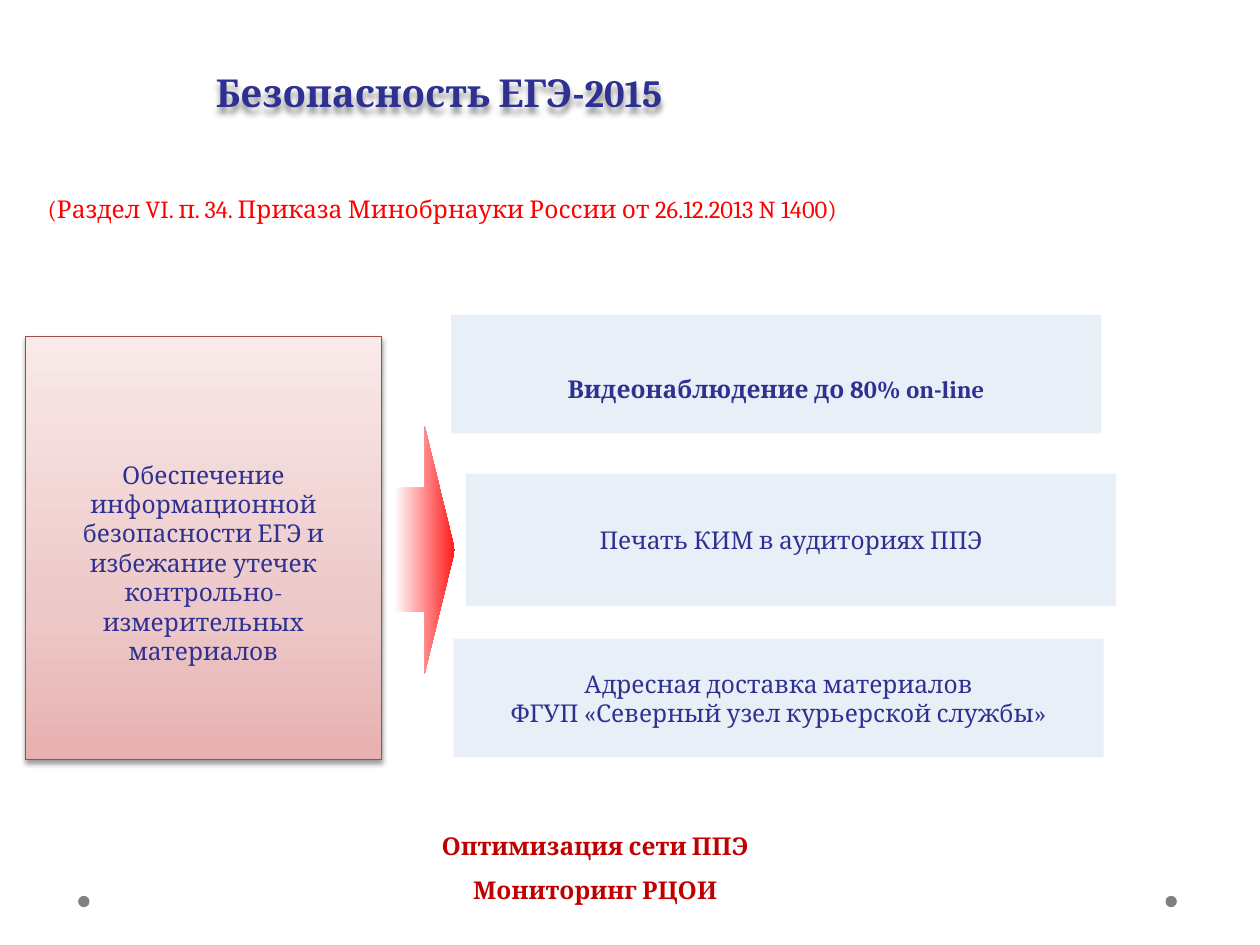
import pptx
import pptx.util
import pptx.dml.color
import pptx.enum.shapes
import pptx.enum.text
import pptx.oxml.ns
from lxml import etree

SHAPE = pptx.enum.shapes.MSO_SHAPE
ALIGN = pptx.enum.text.PP_ALIGN
ANCHOR = pptx.enum.text.MSO_ANCHOR
WIDTH, HEIGHT = 10, 7.5
NAVY, RED, DARK_RED = "2E3192", "FF0000", "C00000"

# Content: boxes are left, top, width, height in inches
TITLE = "Безопасность ЕГЭ-2015"
SOURCE = "(Раздел VI. п. 34. Приказа Минобрнауки России от 26.12.2013 N 1400)"
GOAL = ("Обеспечение информационной безопасности ЕГЭ и избежание утечек "
        "контрольно-измерительных материалов")
MEASURES = [
    {"box": (3.58, 2.5, 5.16, 0.94), "lines": ["Видеонаблюдение до 80% on-line"],
     "bold": True, "drop": 0.23},
    {"box": (3.7, 3.76, 5.16, 1.05), "lines": ["Печать КИМ в аудиториях ППЭ"]},
    {"box": (3.6, 5.07, 5.16, 0.94),
     "lines": ["Адресная доставка материалов", "ФГУП «Северный узел курьерской службы»"]},
]
RESULTS = ["Оптимизация сети ППЭ", "Мониторинг РЦОИ"]
DOT_SIZE, DOT_TOP, DOT_LEFTS = 0.09, 7.11, (0.62, 9.25)


def rgb(value):
    return pptx.dml.color.RGBColor.from_string(value)


def inches(box):
    return [pptx.util.Inches(length) for length in box]


def add_element(parent, tag, **attributes):
    return etree.SubElement(parent, pptx.oxml.ns.qn(tag), attributes)


def add_color(parent, color, alpha=100):
    element = add_element(parent, "a:srgbClr", val=color)
    if alpha < 100:
        add_element(element, "a:alpha", val=str(alpha * 1000))


def add_shadow(shape, blur, distance, alpha):
    shape.shadow.inherit = False
    effects = shape._element.spPr.find(pptx.oxml.ns.qn("a:effectLst"))
    shadow = add_element(effects, "a:outerShdw", blurRad=str(pptx.util.Pt(blur)),
                         dist=str(pptx.util.Pt(distance)), dir="5400000",
                         algn="ctr", rotWithShape="0")
    add_color(shadow, "000000", alpha)


def set_gradient(shape, stops, angle):
    shape.fill.gradient()
    shape.fill.gradient_angle = angle
    stop_list = shape._element.spPr.find(".//" + pptx.oxml.ns.qn("a:gsLst"))
    for stop in list(stop_list):
        stop_list.remove(stop)
    for position, color in stops:
        add_color(add_element(stop_list, "a:gs", pos=str(position * 1000)), color)


def write(shape, lines, color=NAVY, size=14, bold=False, align=ALIGN.CENTER,
          anchor=ANCHOR.MIDDLE, spacing=None, drop=0):
    frame = shape.text_frame
    frame.text = "\n".join(lines)
    frame_format = {"word_wrap": True, "auto_size": pptx.enum.text.MSO_AUTO_SIZE.NONE,
                    "vertical_anchor": anchor,
                    "margin_top": pptx.util.Inches(0.05 + drop)}
    for name, value in frame_format.items():
        setattr(frame, name, value)
    font_format = {"name": "Cambria", "size": pptx.util.Pt(size), "bold": bold}
    for paragraph in frame.paragraphs:
        paragraph.alignment = align
        paragraph.line_spacing = spacing
        for run in paragraph.runs:
            for name, value in font_format.items():
                setattr(run.font, name, value)
            run.font.color.rgb = rgb(color)


def add_shape(slide, kind, box, fill=None):
    shape = slide.shapes.add_shape(kind, *inches(box))
    shape.shadow.inherit = False
    shape.line.fill.background()
    if fill:
        shape.fill.solid()
        shape.fill.fore_color.rgb = rgb(fill)
    return shape


def add_text(slide, box, lines, **text_format):
    write(slide.shapes.add_textbox(*inches(box)), lines, anchor=ANCHOR.TOP, **text_format)


def main():
    presentation = pptx.Presentation()
    presentation.slide_width, presentation.slide_height = inches((WIDTH, HEIGHT))
    slide = presentation.slides.add_slide(presentation.slide_layouts[5])

    # Corner dots
    for left in DOT_LEFTS:
        add_shape(slide, SHAPE.OVAL, (left, DOT_TOP, DOT_SIZE, DOT_SIZE), "808080")

    # Title with a soft shadow
    title = slide.shapes.title
    title.left, title.top, title.width, title.height = inches((1.61, 0.5, 8.19, 0.47))
    write(title, [TITLE], size=22, bold=True, align=ALIGN.LEFT, anchor=ANCHOR.TOP)
    add_shadow(title, blur=3, distance=3, alpha=43)

    # Legal source
    add_text(slide, (0.28, 1.49, 7.6, 0.34), [SOURCE], color=RED, align=ALIGN.LEFT)

    # Goal panel
    panel = add_shape(slide, SHAPE.RECTANGLE, (0.2, 2.67, 2.83, 3.36))
    set_gradient(panel, [(0, "E8B0B0"), (35, "EDC8C8"), (100, "F9E9E9")], 90)
    panel.line.color.rgb = rgb("9A4E4E")
    panel.line.width = pptx.util.Pt(0.75)
    add_shadow(panel, blur=3.1, distance=1.6, alpha=38)
    write(panel, [GOAL], drop=0.23)

    # Measures
    for measure in MEASURES:
        card = add_shape(slide, SHAPE.RECTANGLE, measure["box"], "B9CDE5")
        color = card._element.spPr.find(".//" + pptx.oxml.ns.qn("a:srgbClr"))
        add_element(color, "a:alpha", val="31000")
        write(card, measure["lines"], bold=measure.get("bold", False),
              drop=measure.get("drop", 0))

    # Arrow from the goal to the measures
    arrow = add_shape(slide, SHAPE.RIGHT_ARROW, (3.13, 3.38, 0.48, 1.97))
    set_gradient(arrow, [(0, "FFFFFF"), (100, "FF1A1A")], 0)

    # Results
    add_text(slide, (2.01, 6.43, 5.43, 0.76), RESULTS, color=DARK_RED, bold=True, spacing=1.5)

    presentation.save("out.pptx")


if __name__ == "__main__":
    main()
